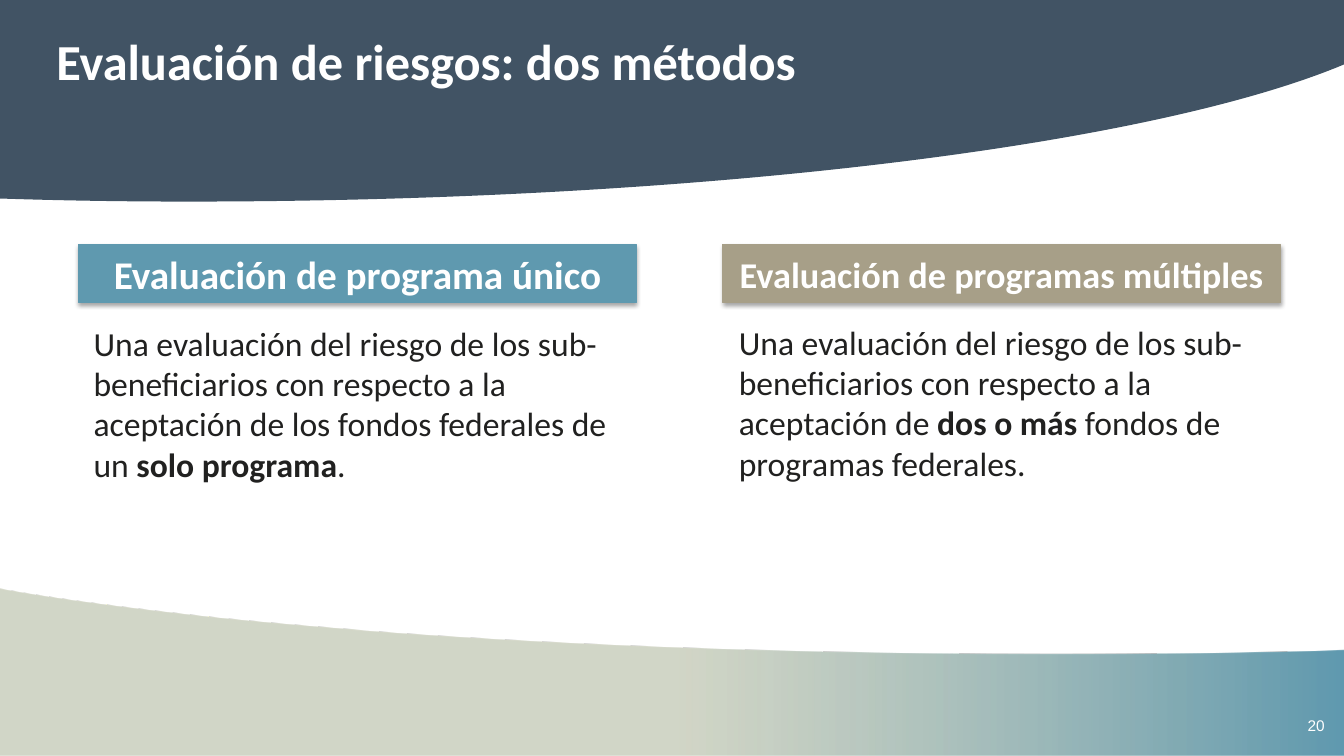
import pptx
import pptx.util
import pptx.dml.color
import pptx.enum.shapes
import pptx.enum.text
import pptx.oxml
import pptx.oxml.ns

Inches, Pt, qn = pptx.util.Inches, pptx.util.Pt, pptx.oxml.ns.qn
ANCHOR, ALIGN = pptx.enum.text.MSO_ANCHOR, pptx.enum.text.PP_ALIGN

# Content
TITLE = "Evaluación de riesgos: dos métodos"
NUMBER = "20"
# heading, heading size, colour, left edge, body left, body top, body runs (text, bold)
METHODS = [
    ("Evaluación de programa único", 28, "5F99AF", 0.78, 0.83, 3.15, [
        ("Una evaluación del riesgo de los sub-beneficiarios con respecto a la "
         "aceptación de los fondos federales de un ", False),
        ("solo programa", True),
        (".", False)]),
    ("Evaluación de programas múltiples", 25.9, "A79F88", 7.17, 7.23, 3.14, [
        ("Una evaluación del riesgo de los sub-beneficiarios con respecto a la "
         "aceptación de ", False),
        ("dos o más ", True),
        ("fondos de programas federales.", False)]),
]

# Band outlines: each part is one corner, or the three points of a Bezier curve
W, H = 13.33, 7.5
TOP_BAND = [[(W, 0.64)], [(W, 0)], [(0, 0)], [(0, 1.97)],
            [(0.6, 1.99), (1.23, 2), (1.86, 2)],
            [(7, 2), (11.42, 1.44), (W, 0.64)]]
BOTTOM_BAND = [[(10.41, 6.49)],
               [(7.25, 6.49), (4.36, 6.35), (2.16, 6.13)],
               [(1.33, 6.04), (0.61, 5.95), (0, 5.84)],
               [(0, H)], [(W, H)], [(W, 6.45)],
               [(12.4, 6.48), (11.42, 6.49), (10.41, 6.49)]]

SHADOW = ('<a:effectLst xmlns:a="http://schemas.openxmlformats.org/drawingml/2006/main">'
          '<a:outerShdw blurRad="39370" dist="22860" dir="5400000" rotWithShape="0">'
          '<a:srgbClr val="000000"><a:alpha val="35000"/></a:srgbClr>'
          '</a:outerShdw></a:effectLst>')


def rgb(color):
    return pptx.dml.color.RGBColor.from_string(color)


def add_run(p, text, size, color, bold=False, font="Calibri"):
    r = p.add_run()
    r.text = text
    r.font.name, r.font.size, r.font.bold = font, Pt(size), bold
    r.font.color.rgb = rgb(color)


def add_band(outline):
    points = [(Inches(x), Inches(y)) for part in outline for x, y in part]
    builder = slide.shapes.build_freeform(*points[0], scale=1)
    builder.add_line_segments(points[1:], close=True)
    sp = builder.convert_to_shape()
    # Join the three segments of each curved part into one Bezier segment
    segments = iter(list(sp._element.iter(qn("a:moveTo"), qn("a:lnTo"))))
    for part in outline:
        group = [next(segments) for _ in part]
        if len(group) == 3:
            curve = group[0].makeelement(qn("a:cubicBezTo"), {})
            group[0].addprevious(curve)
            for segment in group:
                curve.append(segment[0])
                segment.getparent().remove(segment)
    sp.shadow.inherit = False
    sp.line.fill.background()
    return sp


def add_text(left, top, width, height, wrap=True):
    tf = slide.shapes.add_textbox(Inches(left), Inches(top),
                                  Inches(width), Inches(height)).text_frame
    tf.word_wrap = wrap
    return tf.paragraphs[0]


prs = pptx.Presentation()
prs.slide_width, prs.slide_height = Inches(W), Inches(H)
slide = prs.slides.add_slide(prs.slide_layouts[5])

# Bands
top = add_band(TOP_BAND)
top.fill.solid()
top.fill.fore_color.rgb = rgb("415364")

bottom = add_band(BOTTOM_BAND)
bottom.fill.gradient()
bottom.fill.gradient_angle = 0
for stop, position, color in zip(bottom.fill.gradient_stops, (0.5, 1), ("B7BDA4", "5F99AF")):
    stop.position = position
    stop.color.rgb = rgb(color)
first_color = next(bottom._element.iter(qn("a:srgbClr")))
first_color.append(first_color.makeelement(qn("a:alpha"), {"val": "61000"}))

# Slide number
add_run(add_text(12.87, 7.06, 0.39, 0.29, wrap=False), NUMBER, 11, "FFFFFF", font="Arial")

# Title, brought in front of the bands
title = slide.shapes.title
title.left, title.top, title.width, title.height = map(Inches, (0.46, 0.25, 12, 0.75))
tf = title.text_frame
tf.auto_size = pptx.enum.text.MSO_AUTO_SIZE.NONE
tf.vertical_anchor = ANCHOR.TOP
p = tf.paragraphs[0]
p.alignment = ALIGN.LEFT
add_run(p, TITLE, 36, "FFFFFF", True)
slide.shapes._spTree.append(title._element)

# Two methods: heading bar and description
for heading, size, color, left, body_left, body_top, runs in METHODS:
    bar = slide.shapes.add_shape(pptx.enum.shapes.MSO_SHAPE.RECTANGLE, Inches(left),
                                 Inches(2.43), Inches(5.53), Inches(0.57))
    bar.fill.solid()
    bar.fill.fore_color.rgb = rgb(color)
    bar.line.color.rgb = rgb(color)
    bar.line.width = Pt(0.75)
    bar._element.spPr.append(pptx.oxml.parse_xml(SHADOW))
    bar.text_frame.word_wrap = True
    bar.text_frame.vertical_anchor = ANCHOR.MIDDLE
    p = bar.text_frame.paragraphs[0]
    p.alignment = ALIGN.CENTER
    add_run(p, heading, size, "FFFFFF", True)

    p = add_text(body_left, body_top, 5.4, 2.56)
    for text, bold in runs:
        add_run(p, text, 24, "212120", bold)

prs.save("out.pptx")
